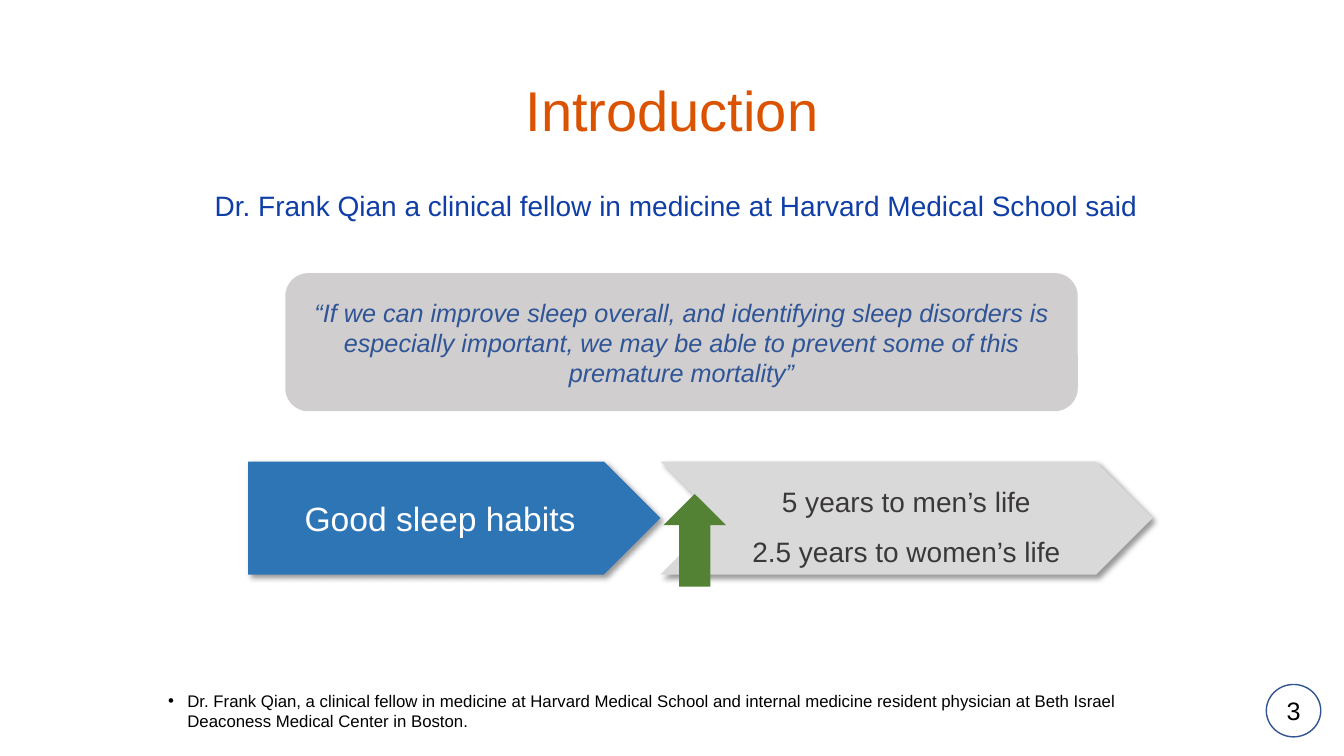
from lxml import etree
from pptx import Presentation
from pptx.dml.color import RGBColor
from pptx.enum.shapes import MSO_SHAPE
from pptx.enum.text import MSO_ANCHOR, PP_ALIGN
from pptx.oxml.ns import qn
from pptx.util import Inches, Pt

PENTAGON = MSO_SHAPE.PENTAGON
CHEVRON = MSO_SHAPE.CHEVRON
UP_ARROW = MSO_SHAPE.UP_ARROW
ROUNDED = MSO_SHAPE.ROUNDED_RECTANGLE
OVAL = MSO_SHAPE.OVAL
TOP, MIDDLE = MSO_ANCHOR.TOP, MSO_ANCHOR.MIDDLE
LEFT, CENTER = PP_ALIGN.LEFT, PP_ALIGN.CENTER

FONT = "Arial"
BAND_TOP, BAND_HEIGHT = 4.58, 1.12


def color(value):
    return RGBColor.from_string(value)


def write(shape, lines, size, ink, align=CENTER, anchor=MIDDLE, spacing=None, italic=None):
    """Fill a shape with one paragraph per line, all in one style."""
    frame = shape.text_frame
    frame.text = "\n".join(lines)
    frame.word_wrap = True
    frame.vertical_anchor = anchor
    for para in frame.paragraphs:
        para.alignment = align
        para.line_spacing = spacing
        for span in para.runs:
            span.font.name = FONT
            span.font.size = Pt(size)
            span.font.italic = italic
            span.font.color.rgb = color(ink)


def add_title(page, text):
    title = page.shapes.title
    title.left, title.top = Inches(4.93), Inches(0.42)
    title.width, title.height = Inches(3.47), Inches(0.94)
    write(title, [text], 40, "DB5300", anchor=TOP, spacing=Pt(68.3))


def add_text(page, left, top, width, height, text, size, ink):
    box = page.shapes.add_textbox(Inches(left), Inches(top), Inches(width), Inches(height))
    write(box, [text], size, ink, align=LEFT, anchor=TOP)
    return box


def add_block(page, kind, left, top, width, height, fill, line=None):
    block = page.shapes.add_shape(kind, Inches(left), Inches(top), Inches(width), Inches(height))
    block.shadow.inherit = False
    block.fill.solid()
    block.fill.fore_color.rgb = color(fill)
    if line:
        block.line.color.rgb = color(line)
        block.line.width = Pt(1)
    else:
        block.line.fill.background()
    return block


def add_drop_shadow(shape):
    effects = shape._element.spPr.find(qn("a:effectLst"))
    shadow = etree.SubElement(effects, qn("a:outerShdw"), blurRad=str(Pt(4)),
                              dist=str(Pt(3)), dir=str(45 * 60000), algn="tl", rotWithShape="0")
    tint = etree.SubElement(shadow, qn("a:srgbClr"), val="000000")
    etree.SubElement(tint, qn("a:alpha"), val="40000")


def add_bullet(para, indent):
    props = para._p.get_or_add_pPr()
    props.set("marL", str(Inches(indent)))
    props.set("indent", str(-Inches(indent)))
    etree.SubElement(props, qn("a:buFont"), typeface=FONT)
    etree.SubElement(props, qn("a:buChar"), char="•")


def add_band(page, kind, left, width, fill, lines, size, ink, spacing=None):
    """Add one shadowed arrow of the cause-and-effect row."""
    band = add_block(page, kind, left, BAND_TOP, width, BAND_HEIGHT, fill)
    add_drop_shadow(band)
    write(band, lines, size, ink, spacing=spacing)


def add_page_number(page, number):
    badge = add_block(page, OVAL, 12.56, 6.79, 0.54, 0.52, "FFFFFF", "325491")
    write(badge, [number], 18, "000000")
    frame = badge.text_frame
    frame.margin_left = frame.margin_right = frame.margin_top = frame.margin_bottom = 0


def main():
    deck = Presentation()
    deck.slide_width, deck.slide_height = Inches(13.33), Inches(7.5)
    page = deck.slides.add_slide(deck.slide_layouts[5])

    add_page_number(page, "3")
    add_title(page, "Introduction")

    add_band(page, PENTAGON, 2.46, 4.09, "2E75B6", ["Good sleep habits"], 24, "FFFFFF")
    add_band(page, CHEVRON, 6.55, 4.88, "D9D9D9",
             ["5 years to men’s life", "2.5 years to women’s life"], 20, "3B3838", spacing=1.5)
    add_block(page, UP_ARROW, 6.58, 4.9, 0.62, 0.92, "548235")

    footnote = add_text(page, 1.57, 6.8, 9.67, 0.5,
                        "Dr. Frank Qian, a clinical fellow in medicine at Harvard Medical School and "
                        "internal medicine resident physician at Beth Israel Deaconess Medical Center "
                        "in Boston.", 12, "000000")
    add_bullet(footnote.text_frame.paragraphs[0], 0.19)
    add_text(page, 2.03, 1.82, 10.08, 0.44,
             "Dr. Frank Qian a clinical fellow in medicine at Harvard Medical School said",
             20, "103EA7")

    quote = add_block(page, ROUNDED, 2.83, 2.71, 7.86, 1.37, "D0CECE")
    write(quote, ["“If we can improve sleep overall, and identifying sleep disorders is especially "
                  "important, we may be able to prevent some of this premature mortality”"],
          18, "2F5597", italic=True)

    deck.save("out.pptx")


if __name__ == "__main__":
    main()
